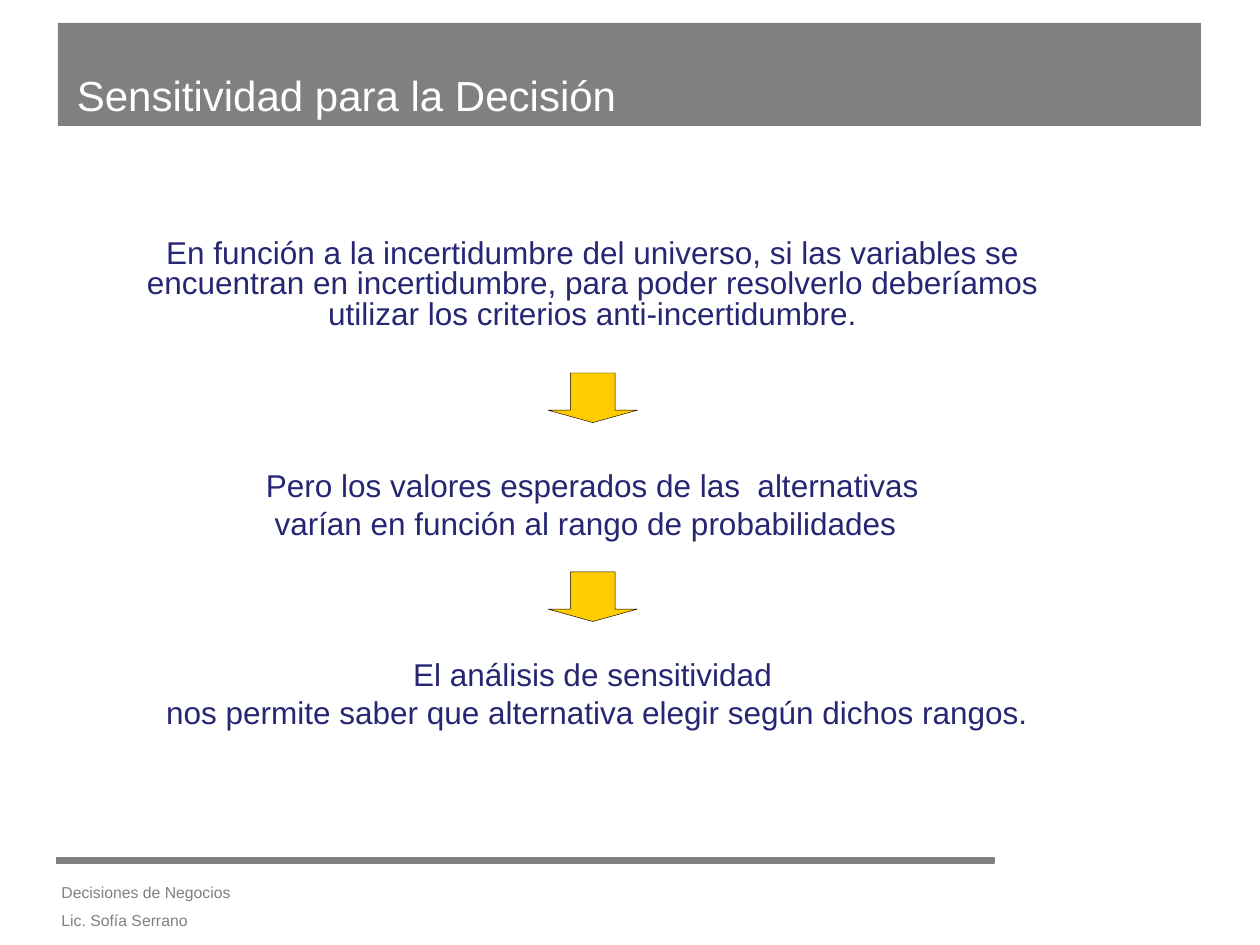
from pptx import Presentation
from pptx.dml.color import RGBColor
from pptx.enum.shapes import MSO_SHAPE as Shape
from pptx.enum.text import MSO_ANCHOR as Anchor, MSO_AUTO_SIZE as AutoSize, PP_ALIGN as Align
from pptx.util import Cm, Pt

COLORS = {"gray": "808080", "white": "FFFFFF", "navy": "262673",
          "yellow": "FFCC00", "black": "000000"}
FONT = "Arial"

TITLE_BAR = (1.17, 0.46, 23.04, 2.08)
FOOTER_RULE = (1.14, 17.3, 18.9, 0.1)
ARROW_LEFT, ARROW_WIDTH, ARROW_HEIGHT = 11.05, 1.8, 1.0
ARROW_TOPS = (7.52, 11.53)

TEXTS = [
    {"box": (0.99, 17.48, 7.75, 1.4), "size": 9, "color": "gray", "spacing": 1.5,
     "lines": ["Decisiones de Negocios", "Lic. Sofía Serrano"]},
    {"box": (1.3, 1.19, 22.91, 1.42), "size": 24, "color": "white", "anchor": Anchor.MIDDLE,
     "lines": ["Sensitividad para la Decisión"]},
    {"box": (2.24, 4.72, 19.41, 2.41), "align": Align.CENTER, "spacing": 0.8,
     "lines": ["En función a la incertidumbre del universo, si las variables se "
               "encuentran en incertidumbre, para poder resolverlo deberíamos "
               "utilizar los criterios anti-incertidumbre."]},
    {"box": (5.11, 9.27, 13.79, 1.8), "hanging": 0.95, "wrap": False,
     "lines": ["Pero los valores esperados de las  alternativas",
               " varían en función al rango de probabilidades"]},
    {"box": (2.84, 13.08, 18.21, 1.8), "hanging": 0.95, "wrap": False, "align": Align.CENTER,
     "lines": ["El análisis de sensitividad",
               " nos permite saber que alternativa elegir según dichos rangos."]},
]


def color(name):
    return RGBColor.from_string(COLORS[name])


def add_block(slide, kind, box, fill, line=None, width=0.75):
    shape = slide.shapes.add_shape(kind, *map(Cm, box))
    shape.shadow.inherit = False
    shape.fill.solid()
    shape.fill.fore_color.rgb = color(fill)
    if line:
        shape.line.color.rgb = color(line)
        shape.line.width = Pt(width)
    else:
        shape.line.fill.background()
    return shape


def add_text(slide, box, lines, size=18, color_name="navy", align=Align.LEFT,
             spacing=1.0, anchor=Anchor.TOP, hanging=0, wrap=True):
    frame = slide.shapes.add_textbox(*map(Cm, box)).text_frame
    frame.word_wrap = wrap
    frame.auto_size = AutoSize.NONE if wrap else AutoSize.SHAPE_TO_FIT_TEXT
    frame.vertical_anchor = anchor
    for index, line in enumerate(lines):
        paragraph = frame.add_paragraph() if index else frame.paragraphs[0]
        paragraph.alignment = align
        paragraph.line_spacing = spacing
        if hanging:
            properties = paragraph._p.get_or_add_pPr()
            properties.set("marL", str(Cm(hanging)))
            properties.set("indent", str(-Cm(hanging)))
        run = paragraph.add_run()
        run.text = line
        run.font.name = FONT
        run.font.size = Pt(size)
        run.font.color.rgb = color(color_name)


def main():
    presentation = Presentation()
    presentation.slide_width, presentation.slide_height = Cm(25.4), Cm(19.05)
    slide = presentation.slides.add_slide(presentation.slide_layouts[6])

    add_block(slide, Shape.RECTANGLE, TITLE_BAR, "gray")
    add_block(slide, Shape.RECTANGLE, FOOTER_RULE, "gray", "gray")
    for text in TEXTS:
        options = dict(text)
        add_text(slide, color_name=options.pop("color", "navy"), **options)
    for top in ARROW_TOPS:
        arrow = add_block(slide, Shape.DOWN_ARROW,
                          (ARROW_LEFT, top, ARROW_WIDTH, ARROW_HEIGHT),
                          "yellow", "black", 0.25)
        arrow.adjustments[0], arrow.adjustments[1] = 0.5, 0.25

    presentation.save("out.pptx")


if __name__ == "__main__":
    main()
